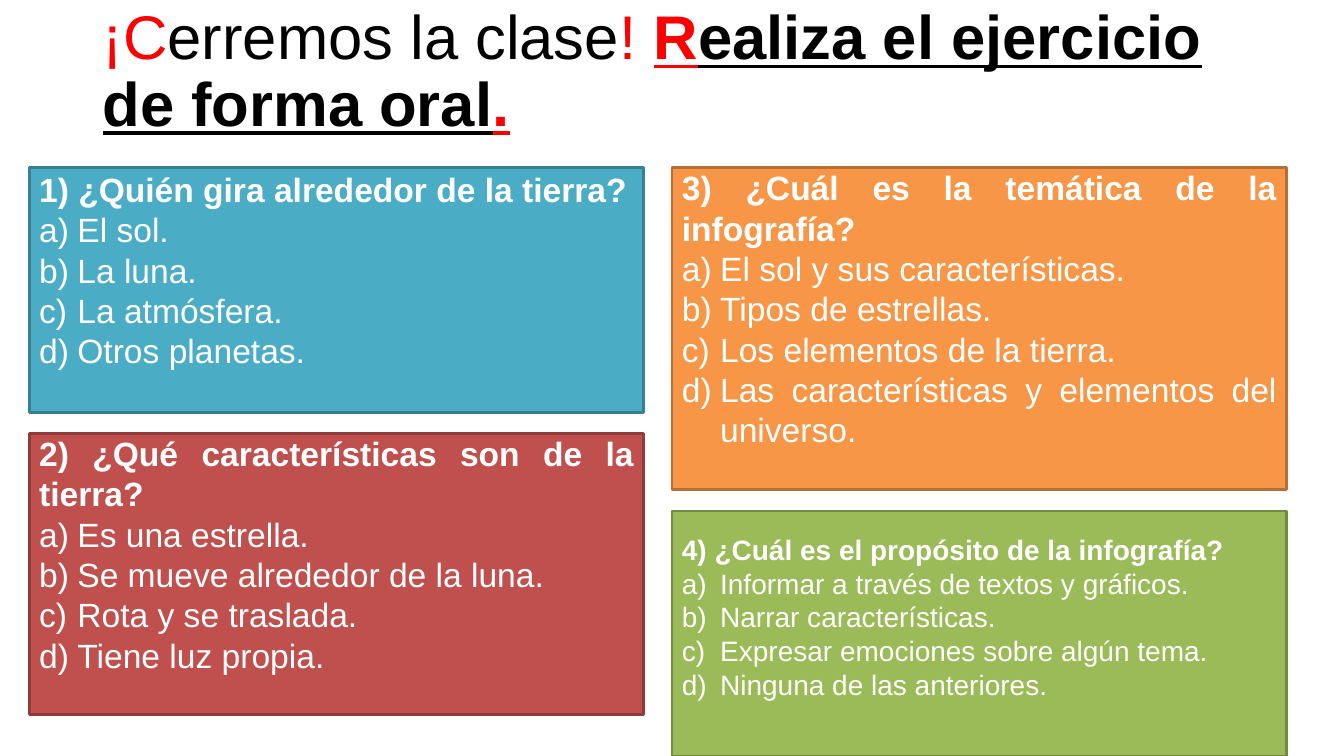
import pptx
import pptx.util
import pptx.dml.color
import pptx.enum.shapes
import pptx.enum.text
import pptx.oxml.ns
from lxml import etree

Inches = pptx.util.Inches
Pt = pptx.util.Pt
RGBColor = pptx.dml.color.RGBColor
Align = pptx.enum.text.PP_ALIGN

BLACK = RGBColor(0x00, 0x00, 0x00)
RED = RGBColor(0xFF, 0x00, 0x00)
WHITE = RGBColor(0xFF, 0xFF, 0xFF)
TEAL, TEAL_EDGE = RGBColor(0x4B, 0xAC, 0xC6), RGBColor(0x37, 0x7F, 0x92)
BRICK, BRICK_EDGE = RGBColor(0xC0, 0x50, 0x4D), RGBColor(0x8E, 0x3B, 0x39)
ORANGE, ORANGE_EDGE = RGBColor(0xF7, 0x96, 0x46), RGBColor(0xB7, 0x6F, 0x34)
GREEN, GREEN_EDGE = RGBColor(0x9B, 0xBB, 0x59), RGBColor(0x73, 0x8A, 0x42)

LEFT_COLUMN, RIGHT_COLUMN = 0.29, 6.67
CARD_WIDTH = 6.1
ANSWER_INDENT = 0.38
LINE_HEIGHT = 1.2


class QuizSlide:
    """Holds the text style and the slide being filled."""

    font_name = "Arial"

    def __init__(self, slide):
        self.slide = slide

    def add_run(self, paragraph, text, size, color, bold=False, underline=False):
        run = paragraph.add_run()
        run.text = text
        run.font.name = self.font_name
        run.font.size = Pt(size)
        run.font.color.rgb = color
        run.font.bold = bold
        run.font.underline = underline

    def add_title(self, left, top, width, height, pieces):
        box = self.slide.shapes.add_textbox(
            Inches(left), Inches(top), Inches(width), Inches(height))
        frame = box.text_frame
        frame.word_wrap = True
        frame.vertical_anchor = pptx.enum.text.MSO_ANCHOR.MIDDLE
        paragraph = frame.paragraphs[0]
        paragraph.line_spacing = 0.9
        for text, color, emphasis in pieces:
            self.add_run(paragraph, text, 44, color, emphasis, emphasis)

    def set_letter_bullet(self, paragraph):
        properties = paragraph._p.get_or_add_pPr()
        indent = Inches(ANSWER_INDENT)
        properties.set("marL", str(indent))
        properties.set("indent", str(-indent))
        bullet = etree.SubElement(properties, pptx.oxml.ns.qn("a:buAutoNum"))
        bullet.set("type", "alphaLcParenR")

    def add_question(self, left, top, height, fill, edge, size, question, answers):
        card = self.slide.shapes.add_shape(
            pptx.enum.shapes.MSO_SHAPE.RECTANGLE,
            Inches(left), Inches(top), Inches(CARD_WIDTH), Inches(height))
        card.shadow.inherit = False
        card.fill.solid()
        card.fill.fore_color.rgb = fill
        card.line.color.rgb = edge
        card.line.width = Pt(2)

        # The bottom margin leaves one free line below the answers
        frame = card.text_frame
        frame.word_wrap = True
        frame.vertical_anchor = pptx.enum.text.MSO_ANCHOR.MIDDLE
        frame.margin_top = 0
        frame.margin_bottom = Pt(size * LINE_HEIGHT)

        paragraph = frame.paragraphs[0]
        paragraph.alignment = Align.JUSTIFY
        self.add_run(paragraph, question, size, WHITE, bold=True)
        for answer in answers:
            paragraph = frame.add_paragraph()
            paragraph.alignment = Align.JUSTIFY
            self.set_letter_bullet(paragraph)
            self.add_run(paragraph, answer, size, WHITE)


TITLE = [
    ("¡C", RED, False),
    ("erremos la clase", BLACK, False),
    ("! ", RED, False),
    ("R", RED, True),
    ("ealiza el ejercicio de forma oral", BLACK, True),
    (".", RED, True),
]

# left, top, height, fill, edge, text size, question, answers
QUESTIONS = [
    (LEFT_COLUMN, 1.66, 2.43, TEAL, TEAL_EDGE, 24,
     "1) ¿Quién gira alrededor de la tierra?",
     ["El sol.", "La luna.", "La atmósfera.", "Otros planetas."]),
    (LEFT_COLUMN, 4.3, 2.79, BRICK, BRICK_EDGE, 24,
     "2) ¿Qué características son de la tierra?",
     ["Es una estrella.", "Se mueve alrededor de la luna.",
      "Rota y se traslada.", "Tiene luz propia."]),
    (RIGHT_COLUMN, 1.66, 3.2, ORANGE, ORANGE_EDGE, 24,
     "3) ¿Cuál es la temática de la infografía?",
     ["El sol y sus características.", "Tipos de estrellas.",
      "Los elementos de la tierra.",
      "Las características y elementos del universo."]),
    (RIGHT_COLUMN, 5.07, 2.43, GREEN, GREEN_EDGE, 20,
     "4) ¿Cuál es el propósito de la infografía?",
     ["Informar a través de textos y gráficos.", "Narrar características.",
      "Expresar emociones sobre algún tema.", "Ninguna de las anteriores."]),
]


def main():
    presentation = pptx.Presentation()
    presentation.slide_width = Inches(13.34)
    presentation.slide_height = Inches(7.5)
    quiz = QuizSlide(presentation.slides.add_slide(presentation.slide_layouts[6]))

    # Title
    quiz.add_title(0.92, 0, 11.5, 1.45, TITLE)

    # Question cards
    for question in QUESTIONS:
        quiz.add_question(*question)

    presentation.save("out.pptx")


if __name__ == "__main__":
    main()
